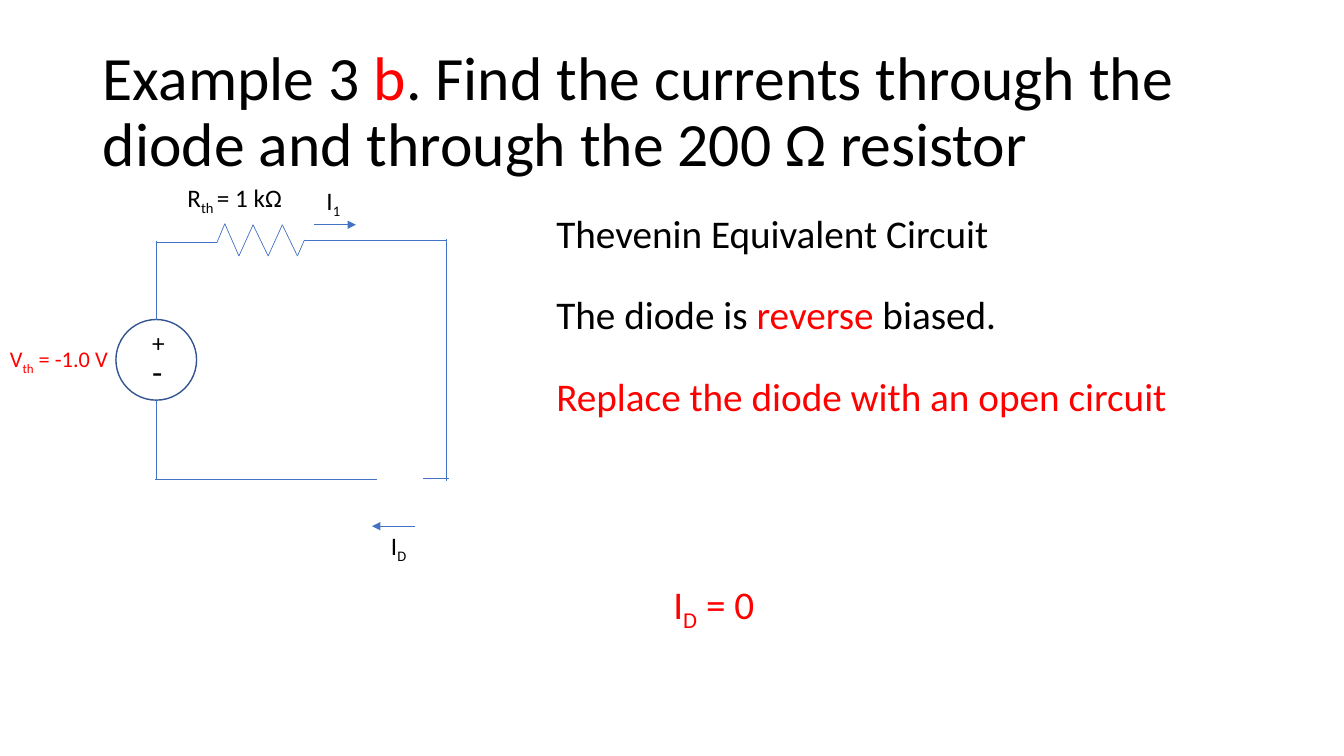
from itertools import pairwise

from lxml.etree import SubElement
from pptx import Presentation
from pptx.dml.color import RGBColor
from pptx.enum.shapes import MSO_CONNECTOR, MSO_SHAPE
from pptx.enum.text import MSO_ANCHOR
from pptx.oxml.ns import qn
from pptx.util import Emu, Pt

PX = 9144
BLACK = RGBColor(0x00, 0x00, 0x00)
RED = RGBColor(0xFF, 0x00, 0x00)
WIRE_BLUE = RGBColor(0x44, 0x72, 0xC4)
SOURCE_BLUE = RGBColor(0x32, 0x54, 0x91)


def write(frame, size, runs):
    frame.word_wrap = True
    paragraph = frame.paragraphs[0]
    paragraph.font.name = "Calibri"
    paragraph.font.size = Pt(size)
    for text, color, baseline in runs:
        run = paragraph.add_run()
        run.text = text
        run.font.color.rgb = color
        if baseline:
            run.font._element.set("baseline", str(baseline * 1000))
    return paragraph


def add_wire(start, end):
    wire = slide.shapes.add_connector(
        MSO_CONNECTOR.STRAIGHT, *[Emu(n * PX) for n in (*start, *end)])
    wire.line.color.rgb = WIRE_BLUE
    wire.line.width = Pt(0.5)
    SubElement(wire._element.spPr, qn("a:effectLst"))
    return wire


prs = Presentation()
prs.slide_width = Emu(1333 * PX)
prs.slide_height = Emu(750 * PX)
slide = prs.slides.add_slide(prs.slide_layouts[5])

title = slide.shapes.title
title.left, title.top, title.width, title.height = [Emu(n * PX) for n in (92, 40, 1150, 145)]
title.text_frame.vertical_anchor = MSO_ANCHOR.MIDDLE
heading = write(title.text_frame, 44, [
    ("Example 3 ", BLACK, 0),
    ("b", RED, 0),
    (". Find the currents through the diode and through the 200 Ω resistor", BLACK, 0),
])
heading.line_spacing = 0.9
heading.alignment = 1

voltage_source = slide.shapes.add_shape(
    MSO_SHAPE.OVAL, *[Emu(n * PX) for n in (115, 317, 80, 80)])
voltage_source.shadow.inherit = False
voltage_source.fill.background()
voltage_source.line.color.rgb = SOURCE_BLUE
voltage_source.line.width = Pt(1)

wires = [
    ((155, 239), (155, 317)),
    ((155, 397), (155, 475)),
    ((155, 240), (215, 240)),
    ((302, 238), (442, 238)),
    ((154, 476), (374, 476)),
    ((445, 475), (420, 475)),
    ((443, 477), (443, 237)),
]
resistor = [(215, 241), (223, 222), (237, 254), (251, 223),
            (266, 254), (280, 223), (295, 254), (302, 238)]
for start, end in [*wires, *pairwise(resistor)]:
    add_wire(start, end)

for start, end in [((311, 223), (353, 223)), ((412, 522), (369, 522))]:
    current_arrow = add_wire(start, end)
    SubElement(current_arrow.line._get_or_add_ln(), qn("a:tailEnd"), type="triangle")

circuit_labels = [
    ((141, 320, 36, 40), 18, [("+", BLACK, 0)]),
    ((141, 343, 36, 50), 24, [("-", BLACK, 0)]),
    ((0, 338, 131, 37), 16, [("V", RED, 0), ("th", RED, -25), (" = -1.0 V", RED, 0)]),
    ((176, 176, 118, 40), 18, [("R", BLACK, 0), ("th ", BLACK, -25), ("= 1 kΩ", BLACK, 0)]),
    ((314, 179, 40, 40), 18, [("I", BLACK, 0), ("1", BLACK, -25)]),
    ((378, 521, 40, 40), 18, [("I", BLACK, 0), ("D", BLACK, -25)]),
]
statements = [
    ((542, 208, 450, 71), 28, [("Thevenin Equivalent Circuit", BLACK, 0)]),
    ((542, 288, 750, 73), 28, [
        ("The diode is ", BLACK, 0), ("reverse", RED, 0), (" biased.", BLACK, 0)]),
    ((542, 370, 750, 73), 28, [("Replace the diode with an open circuit", RED, 0)]),
    ((658, 571, 318, 61), 28, [("I", RED, 0), ("D", RED, -25), (" = 0", RED, 0)]),
]
for texts, line_spacing, space_before in [(circuit_labels, 1.0, 0), (statements, 0.9, 10)]:
    for place, size, runs in texts:
        box = slide.shapes.add_textbox(*[Emu(n * PX) for n in place])
        paragraph = write(box.text_frame, size, runs)
        paragraph.line_spacing = line_spacing
        paragraph.space_before = Pt(space_before)

prs.save("out.pptx")
